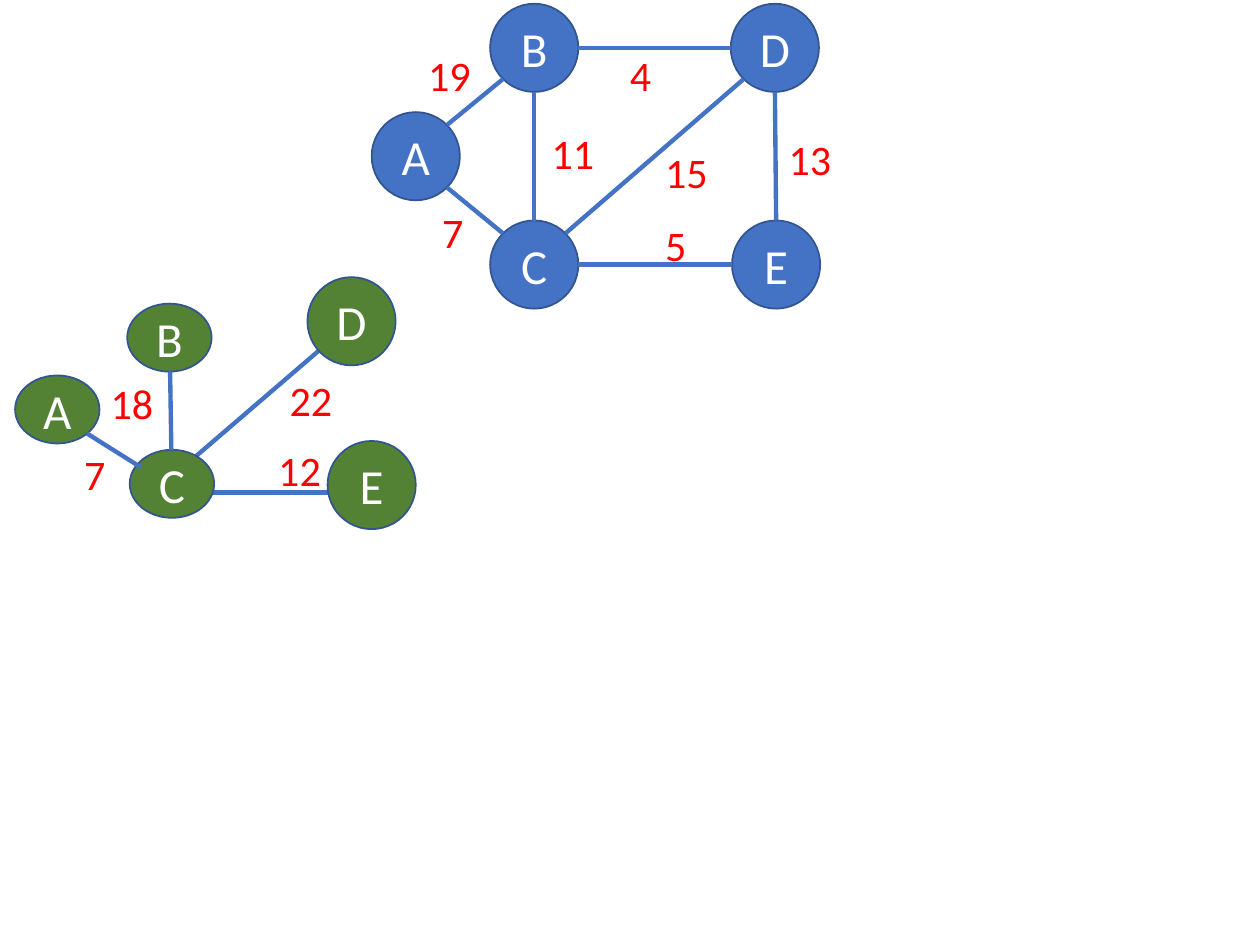
from pptx import Presentation
from pptx.dml.color import RGBColor
from pptx.enum.shapes import MSO_CONNECTOR, MSO_SHAPE
from pptx.enum.text import MSO_ANCHOR, MSO_AUTO_SIZE, PP_ALIGN
from pptx.oxml.ns import qn
from pptx.util import Inches, Pt
from lxml import etree

STRAIGHT = MSO_CONNECTOR.STRAIGHT
ELLIPSE = MSO_SHAPE.OVAL
MIDDLE = MSO_ANCHOR.MIDDLE
CENTER = PP_ALIGN.CENTER
GROW = MSO_AUTO_SIZE.SHAPE_TO_FIT_TEXT

COLORS = {"graph": "4472C4", "tree": "548235", "outline": "325491",
          "weight": "FF0000", "letter": "FFFFFF"}
FONT = "Calibri"

# The page is a grid of 100 columns by 75 rows.
COLUMNS, ROWS = 100, 75
CELL = Inches(0.1)
CIRCLE = (7, 7)
OVAL = (6.7, 5.4)
LABEL = (5.8, 5)
DIAGONAL = 0.5 ** 0.5

# Letter: column and row of the top left corner, size
GRAPH_NODES = {
    "A": (29.5, 8.9, CIRCLE),
    "B": (38.9, 0.3, CIRCLE),
    "D": (58, 0.3, CIRCLE),
    "C": (38.9, 17.5, CIRCLE),
    "E": (58.1, 17.5, CIRCLE),
}
TREE_NODES = {
    "D": (24.4, 22, CIRCLE),
    "E": (26, 35, CIRCLE),
    "A": (1.2, 29.8, OVAL),
    "C": (10.3, 35.7, OVAL),
    "B": (10.1, 24.1, OVAL),
}
# Nodes joined, with the direction in which the edge leaves the first one
GRAPH_EDGES = [
    ("B", "D", 1, 0), ("D", "E", 0, 1), ("C", "E", 1, 0), ("A", "C", 1, 1),
    ("A", "B", 1, -1), ("B", "C", 0, 1), ("C", "D", 1, -1),
]
TREE_EDGES_BEHIND = [((28.3, 39.1), (16.2, 39.1)), ((15.1, 36.6), (29.3, 24.4))]
TREE_EDGES_FRONT = [((11.2, 37.1), (6.9, 34.4)), ((13.6, 35.7), (13.5, 29.5))]
WEIGHTS = [
    ("7", 34.1, 15.9), ("11", 42.8, 9.6), ("4", 49, 3.4), ("15", 51.8, 11.1),
    ("5", 51.8, 16.9), ("13", 61.6, 10.1), ("19", 33, 3.4),
    ("22", 22, 29.2), ("12", 21.1, 34.8), ("7", 5.7, 35.1), ("18", 7.8, 29.5),
]


def cells(*counts):
    return [round(count * CELL) for count in counts]


def color(name):
    return RGBColor.from_string(COLORS[name])


def style_text(para, size, color_name):
    para.font.name = FONT
    para.font.size = Pt(size)
    para.font.color.rgb = color(color_name)


def add_node(page, letter, place, fill):
    column, row, size = place
    node = page.shapes.add_shape(ELLIPSE, *cells(column, row, *size))
    node.shadow.inherit = False
    node.fill.solid()
    node.fill.fore_color.rgb = color(fill)
    node.line.color.rgb = color("outline")
    node.line.width = Pt(1)
    frame = node.text_frame
    frame.text = letter
    frame.vertical_anchor = MIDDLE
    para = frame.paragraphs[0]
    para.alignment = CENTER
    style_text(para, 28, "letter")


def add_edge(page, start, end):
    edge = page.shapes.add_connector(STRAIGHT, *cells(*start, *end))
    edge.line.color.rgb = color("graph")
    edge.line.width = Pt(2.5)
    etree.SubElement(edge._element.spPr, qn("a:effectLst"))


def add_weight(page, text, column, row):
    box = page.shapes.add_textbox(*cells(column, row, *LABEL))
    frame = box.text_frame
    frame.word_wrap = True
    frame.auto_size = GROW
    frame.text = text
    style_text(frame.paragraphs[0], 24, "weight")


def rim_point(place, across, down):
    """Point on a node's outline in one of the eight compass directions."""
    column, row, (width, height) = place
    reach = DIAGONAL if across and down else 1
    return (column + width / 2 * (1 + across * reach),
            row + height / 2 * (1 + down * reach))


def add_graph(page):
    for letter, place in GRAPH_NODES.items():
        add_node(page, letter, place, "graph")
    for first, second, across, down in GRAPH_EDGES:
        add_edge(page, rim_point(GRAPH_NODES[first], across, down),
                 rim_point(GRAPH_NODES[second], -across, -down))


def add_tree(page):
    for start, end in TREE_EDGES_BEHIND:
        add_edge(page, start, end)
    for letter, place in TREE_NODES.items():
        add_node(page, letter, place, "tree")
    for start, end in TREE_EDGES_FRONT:
        add_edge(page, start, end)


def main():
    deck = Presentation()
    deck.slide_width, deck.slide_height = cells(COLUMNS, ROWS)
    page = deck.slides.add_slide(deck.slide_layouts[6])
    add_graph(page)
    add_tree(page)
    for weight in WEIGHTS:
        add_weight(page, *weight)
    deck.save("out.pptx")


if __name__ == "__main__":
    main()
